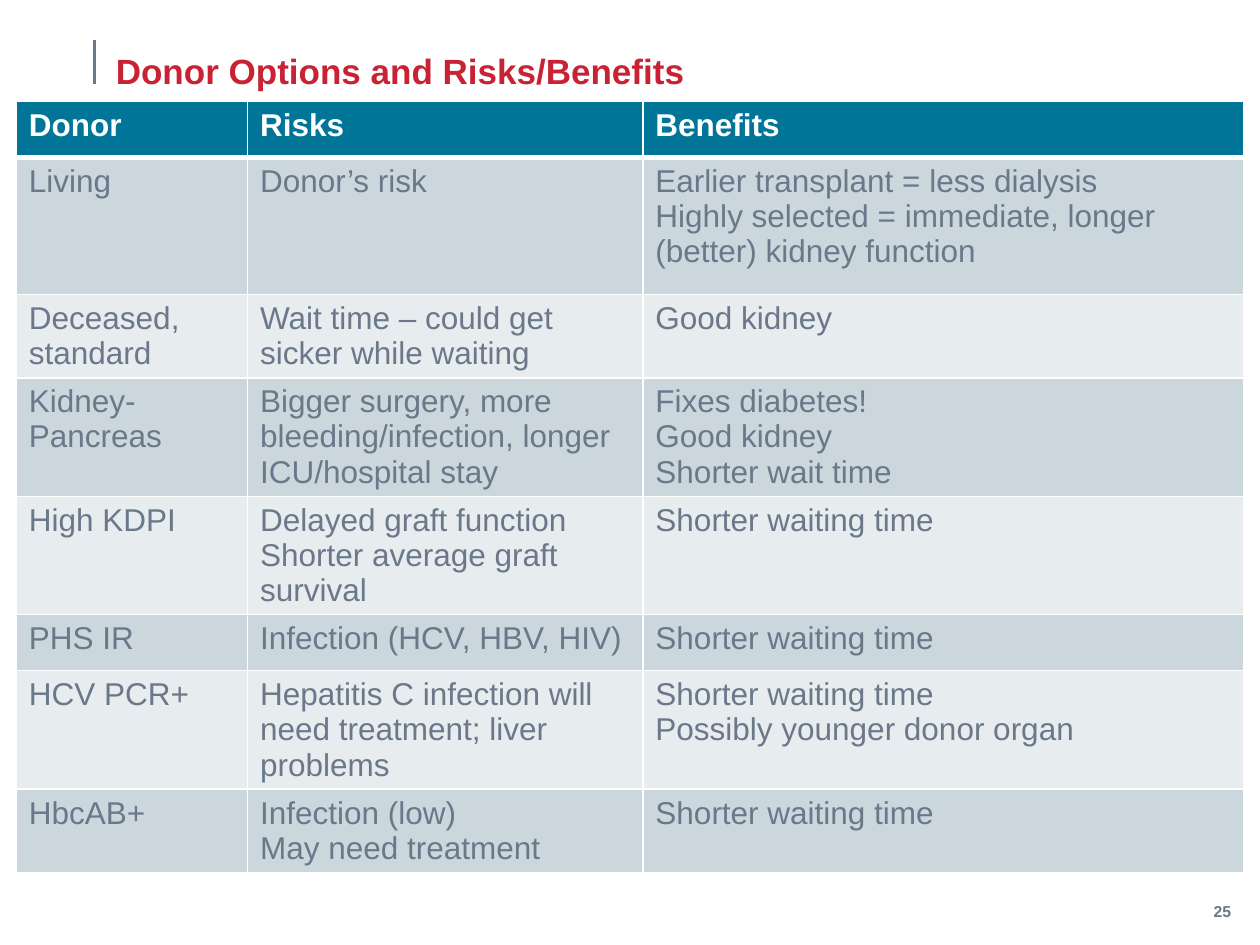
from lxml import etree
from pptx import Presentation
from pptx.dml.color import RGBColor
from pptx.enum import shapes, text
from pptx.oxml.ns import qn
from pptx.util import Cm, Pt

TITLE = "Donor Options and Risks/Benefits"
PAGE = "25"
HEADER = ("Donor", "Risks", "Benefits")
# Each cell is a list of paragraphs
DONORS = [
    (["Living"], ["Donor’s risk"],
     ["Earlier transplant = less dialysis",
      "Highly selected = immediate, longer (better) kidney function"]),
    (["Deceased, standard"], ["Wait time – could get sicker while waiting"], ["Good kidney"]),
    (["Kidney-Pancreas"],
     ["Bigger surgery, more bleeding/infection, longer ICU/hospital stay"],
     ["Fixes diabetes!", "Good kidney", "Shorter wait time"]),
    (["High KDPI"], ["Delayed graft function", "Shorter average graft survival"],
     ["Shorter waiting time"]),
    (["PHS IR"], ["Infection (HCV, HBV, HIV)"], ["Shorter waiting time"]),
    (["HCV PCR+"], ["Hepatitis C infection will need treatment; liver problems"],
     ["Shorter waiting time", "Possibly younger donor organ"]),
    (["HbcAB+"], ["Infection (low)", "May need treatment"], ["Shorter waiting time"]),
]
COLUMN_WIDTHS = (4.66, 7.97, 12.11)
ROW_HEIGHTS = (1.13, 2.77, 1.13, 1.13, 1.13, 1.13, 1.13, 1.13)
COLORS = {"title": "C92235", "body": "6A788A", "rule": "6A788B", "white": "FFFFFF",
          "header": "007598", "odd": "CCD6DD", "even": "E7ECEF"}


def color(name):
    return RGBColor.from_string(COLORS[name])


def write(frame, paragraphs, size, tint, bold=False, align=None):
    for i, line in enumerate(paragraphs):
        paragraph = frame.paragraphs[0] if i == 0 else frame.add_paragraph()
        paragraph.alignment = align
        run = paragraph.add_run()
        run.text = line
        run.font.name = "Arial"
        run.font.size = Pt(size)
        run.font.bold = bold
        run.font.color.rgb = color(tint)


def set_borders(cell, bottom):
    properties = cell._tc.get_or_add_tcPr()
    for i, (side, width) in enumerate((("L", 1), ("R", 1), ("T", 1), ("B", bottom))):
        border = etree.Element(qn(f"a:ln{side}"), w=str(Pt(width)))
        fill = etree.SubElement(border, qn("a:solidFill"))
        etree.SubElement(fill, qn("a:srgbClr"), val=COLORS["white"])
        properties.insert(i, border)


def main():
    prs = Presentation()
    prs.slide_width, prs.slide_height = Cm(25.4), Cm(19.05)
    slide = prs.slides.add_slide(prs.slide_layouts[5])

    # Title and the rule beside it
    title = slide.shapes.title
    title.left, title.top, title.width, title.height = Cm(2.08), Cm(0.99), Cm(20.17), Cm(0.97)
    heading = title.text_frame
    heading.word_wrap = True
    heading.auto_size = text.MSO_AUTO_SIZE.NONE
    heading.vertical_anchor = text.MSO_ANCHOR.MIDDLE
    write(heading, [TITLE], 20, "title", True, text.PP_ALIGN.LEFT)
    heading.paragraphs[0].line_spacing = 0.9

    rule = slide.shapes.add_connector(shapes.MSO_CONNECTOR.STRAIGHT,
                                      Cm(1.9), Cm(0.81), Cm(1.9), Cm(1.7))
    rule.line.color.rgb = color("rule")
    rule.line.width = Pt(1.5)
    etree.SubElement(rule._element.spPr, qn("a:effectLst"))

    # Donor table
    rows = [tuple([name] for name in HEADER)] + DONORS
    table = slide.shapes.add_table(len(rows), len(HEADER), Cm(0.33), Cm(2.04),
                                   Cm(sum(COLUMN_WIDTHS)), Cm(sum(ROW_HEIGHTS))).table
    for column, width in zip(table.columns, COLUMN_WIDTHS):
        column.width = Cm(width)
    for r, (row, height) in enumerate(zip(rows, ROW_HEIGHTS)):
        table.rows[r].height = Cm(height)
        is_header = r == 0
        band = "header" if is_header else "odd" if r % 2 else "even"
        for c, paragraphs in enumerate(row):
            cell = table.cell(r, c)
            cell.fill.solid()
            cell.fill.fore_color.rgb = color(band)
            set_borders(cell, 3 if is_header else 1)
            write(cell.text_frame, paragraphs, 18, "white" if is_header else "body", is_header)

    # Page number
    page = slide.shapes.add_textbox(Cm(23.06), Cm(18.06), Cm(2.01), Cm(0.64)).text_frame
    page.word_wrap = True
    write(page, [PAGE], 9, "body", True, text.PP_ALIGN.RIGHT)

    prs.save("out.pptx")


if __name__ == "__main__":
    main()
